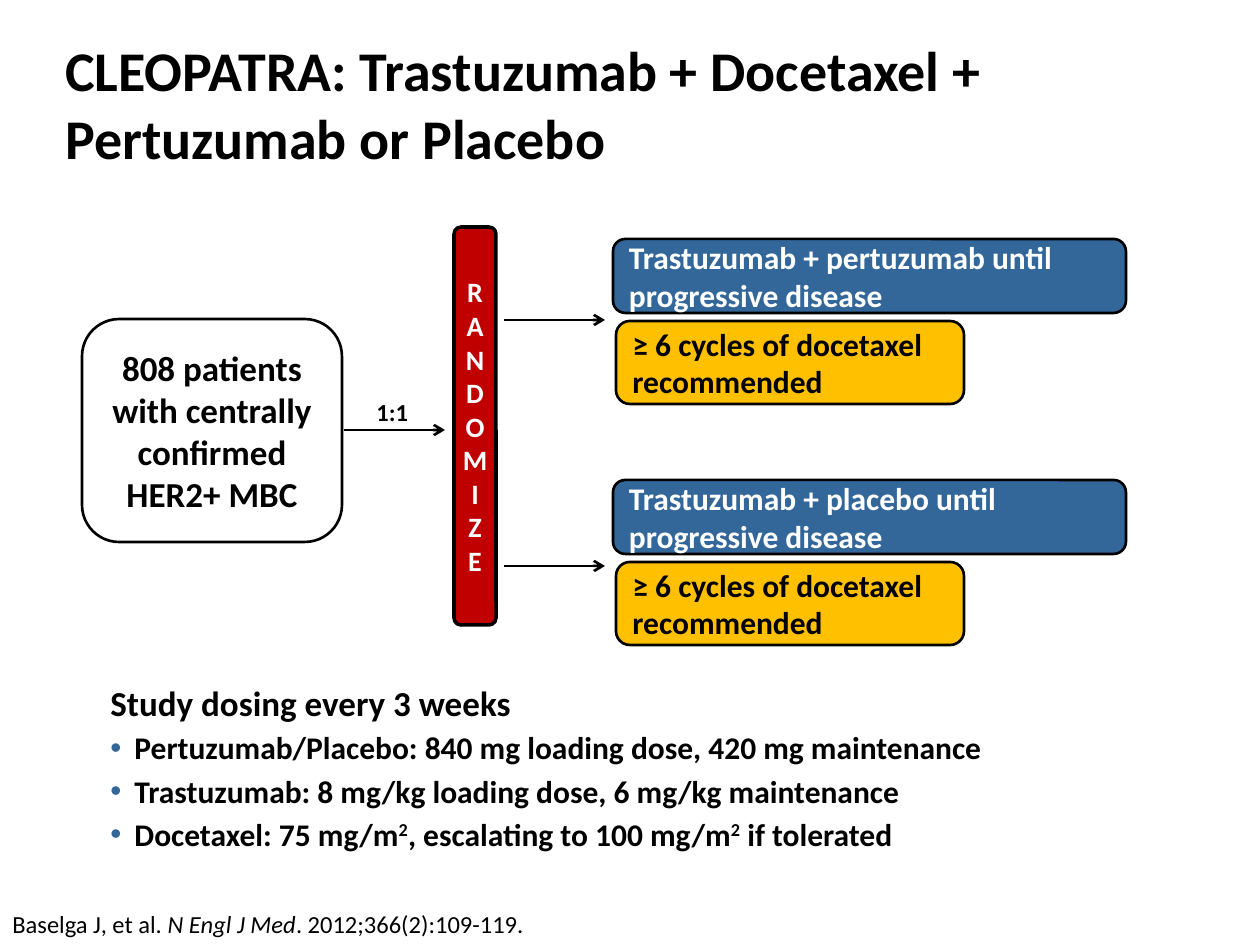
import pptx
import pptx.util
import pptx.dml.color
import pptx.enum.shapes
import pptx.enum.text
import pptx.oxml.ns
import lxml.etree

PX = 914400 / 126
ARM_STEP = 241
FONT = "Calibri"
COLORS = {
    "black": "000000",
    "white": "FFFFFF",
    "blue": "336699",
    "gold": "FFC000",
    "red": "C00000",
}
ALIGN = pptx.enum.text.PP_ALIGN
ANCHOR = pptx.enum.text.MSO_ANCHOR
FIT = pptx.enum.text.MSO_AUTO_SIZE.SHAPE_TO_FIT_TEXT


def px(length):
    return pptx.util.Emu(round(length * PX))


def rgb(color):
    return pptx.dml.color.RGBColor.from_string(COLORS[color])


def set_values(target, values):
    for name, value in values.items():
        setattr(target, name, value)


def add_child(parent, tag, **attributes):
    child = lxml.etree.SubElement(parent, pptx.oxml.ns.qn(tag))
    for name, value in attributes.items():
        child.set(name, value)
    return child


def add_bullet(paragraph):
    properties = paragraph._p.get_or_add_pPr()
    properties.set("marL", str(px(24)))
    properties.set("indent", str(-px(24)))
    bullet_color = add_child(properties, "a:buClr")
    add_child(bullet_color, "a:srgbClr", val=COLORS["blue"])
    add_child(properties, "a:buFont", typeface="Arial")
    add_child(properties, "a:buChar", char="•")


def write(paragraph, pieces, size, color="black", bold=True, align=ALIGN.LEFT):
    paragraph.alignment = align
    for text, style in pieces:
        run = paragraph.add_run()
        run.text = text
        set_values(run.font, {
            "name": FONT,
            "size": pptx.util.Pt(size),
            "bold": bold,
            "italic": style == "italic",
        })
        run.font.color.rgb = rgb(color)
        if style == "super":
            run._r.get_or_add_rPr().set("baseline", "30000")


def add_label(slide, box, frame_format):
    frame = slide.shapes.add_textbox(*map(px, box)).text_frame
    set_values(frame, frame_format)
    return frame


def add_box(slide, box, fill, text, size, color="black", align=ALIGN.LEFT,
            line=1.5, frame_format=None):
    card = slide.shapes.add_shape(
        pptx.enum.shapes.MSO_SHAPE.ROUNDED_RECTANGLE, *map(px, box))
    card.shadow.inherit = False
    card.fill.solid()
    card.fill.fore_color.rgb = rgb(fill)
    card.line.color.rgb = rgb("black")
    card.line.width = pptx.util.Pt(line)
    frame = card.text_frame
    set_values(frame, {"word_wrap": True, "vertical_anchor": ANCHOR.MIDDLE})
    set_values(frame, frame_format or {})
    write(frame.paragraphs[0], [(text, None)], size, color, align=align)
    return frame


def add_arrow(slide, left, top, length=101):
    arrow = slide.shapes.add_connector(
        pptx.enum.shapes.MSO_CONNECTOR.STRAIGHT,
        px(left), px(top), px(left + length), px(top))
    arrow.line.color.rgb = rgb("black")
    arrow.line.width = pptx.util.Pt(1.5)
    add_child(arrow.line._get_or_add_ln(), "a:tailEnd", type="arrow")
    add_child(arrow._element.spPr, "a:effectLst")


def add_arm(slide, index, treatment):
    shift = index * ARM_STEP
    add_box(slide, (613, 239 + shift, 513, 74), "blue",
            f"Trastuzumab + {treatment} until progressive disease", 18, "white")
    add_box(slide, (616, 321 + shift, 348, 83), "gold",
            "≥ 6 cycles of docetaxel recommended", 18)


def add_randomization(slide):
    frame = add_box(slide, (454, 227, 42, 398), "red", "RANDOMIZE", 16, "white",
                    ALIGN.CENTER, 2, dict.fromkeys(
                        ("margin_left", "margin_top", "margin_right", "margin_bottom"), 0))
    frame._txBody.bodyPr.set("vert", "wordArtVert")


def add_dosing(slide):
    frame = add_label(slide, (98, 675, 989, 185), {"word_wrap": True, "auto_size": FIT})
    heading = frame.paragraphs[0]
    heading.space_after = pptx.util.Pt(3)
    write(heading, [("Study dosing every 3 weeks", None)], 20)
    doses = [
        [("Pertuzumab/Placebo: 840 mg loading dose, 420 mg maintenance", None)],
        [("Trastuzumab: 8 mg/kg loading dose, 6 mg/kg maintenance", None)],
        [("Docetaxel: 75 mg/m", None), ("2", "super"),
         (", escalating to 100 mg/m", None), ("2", "super"), (" if tolerated", None)],
    ]
    for dose in doses:
        paragraph = frame.add_paragraph()
        paragraph.space_after = pptx.util.Pt(3)
        add_bullet(paragraph)
        write(paragraph, dose, 18)


def main():
    deck = pptx.Presentation()
    deck.slide_width, deck.slide_height = px(1260), px(945)
    slide = deck.slides.add_slide(deck.slide_layouts[6])

    title = add_label(slide, (53, 38, 1144, 130),
                      {"word_wrap": True, "vertical_anchor": ANCHOR.MIDDLE})
    write(title.paragraphs[0],
          [("CLEOPATRA: Trastuzumab + Docetaxel + Pertuzumab or Placebo", None)], 32)

    add_box(slide, (82, 319, 260, 223), "white",
            "808 patients with centrally confirmed HER2+ MBC", 20,
            align=ALIGN.CENTER, frame_format={"margin_top": px(13), "margin_bottom": px(13)})
    for left, top in ((344, 430), (504, 320), (504, 566)):
        add_arrow(slide, left, top)
    ratio = add_label(slide, (364, 391, 58, 43), {"word_wrap": False, "auto_size": FIT})
    write(ratio.paragraphs[0], [("1:1", None)], 14)
    add_randomization(slide)
    for index, treatment in enumerate(("pertuzumab", "placebo")):
        add_arm(slide, index, treatment)

    add_dosing(slide)
    citation = add_label(slide, (0, 903, 542, 43), {"word_wrap": False, "auto_size": FIT})
    write(citation.paragraphs[0],
          [("Baselga J, et al. ", None), ("N Engl J Med", "italic"),
           (". 2012;366(2):109-119.", None)], 14, bold=False)
    deck.save("out.pptx")


if __name__ == "__main__":
    main()
